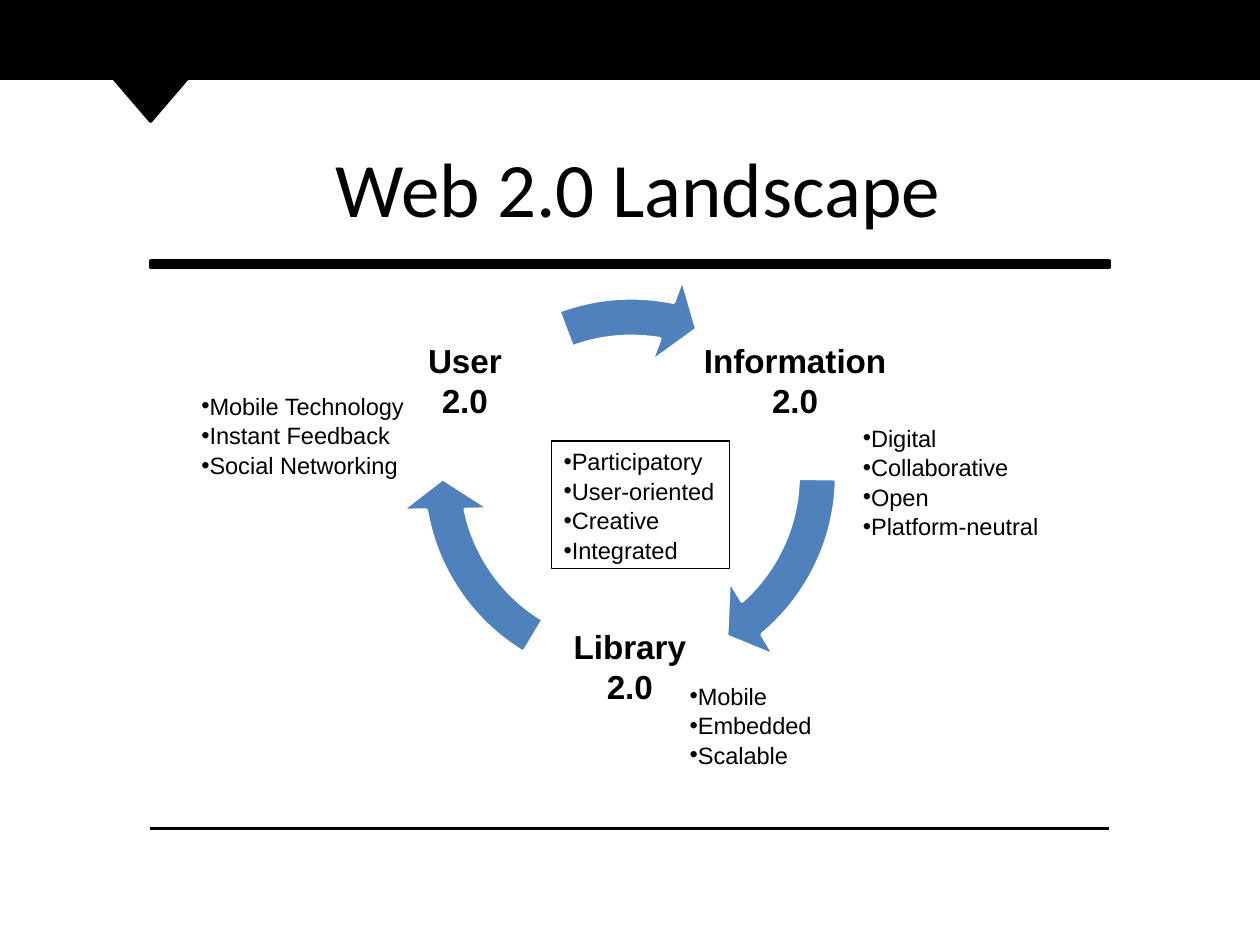
import pptx
import pptx.util
import pptx.dml.color
import pptx.enum.shapes
import pptx.enum.text
import pptx.oxml
import pptx.oxml.ns
from dataclasses import dataclass

Pt = pptx.util.Pt
Shape = pptx.enum.shapes.MSO_SHAPE
Align = pptx.enum.text.PP_ALIGN
Anchor = pptx.enum.text.MSO_ANCHOR


@dataclass(frozen=True)
class Theme:
    ink: str = "000000"
    paper: str = "FFFFFF"
    arrow: str = "4F81BD"
    title_font: str = "Calibri"
    body_font: str = "Arial"
    title_size: float = 44
    label_size: float = 19
    list_size: float = 13.5
    list_gap: float = 0.7
    line_width: float = 2
    frame_width: float = 0.75


THEME = Theme()
CYCLE_BOX = (209.5, 139.3, 301, 305)
LABEL_SIDE = 112.3
ARROW_SIDE = 265


def rgb(value):
    return pptx.dml.color.RGBColor.from_string(value)


def points(box):
    return [Pt(length) for length in box]


def drawing(markup):
    """Parse one drawing element, given without its namespace prefix."""
    return pptx.oxml.parse_xml(f"<a:{markup[0]} {pptx.oxml.ns.nsdecls('a')} {markup[1]}/>")


def add_filled(page, kind, box, fill, line):
    shape = page.shapes.add_shape(kind, *points(box))
    shape.shadow.inherit = False
    shape.fill.solid()
    shape.fill.fore_color.rgb = rgb(fill)
    shape.line.color.rgb = rgb(line)
    shape.line.width = Pt(THEME.line_width)
    return shape


def add_text(para, text, font, size, bold=False):
    span = para.add_run()
    span.text = text
    span.font.name = font
    span.font.size = Pt(size)
    span.font.bold = bold
    span.font.color.rgb = rgb(THEME.ink)


def paragraphs(frame, lines):
    """Yield each line with a paragraph of its own."""
    for index, line in enumerate(lines):
        yield (frame.add_paragraph() if index else frame.paragraphs[0]), line


def add_banner(page, box):
    """Black band with a pointer hanging below it."""
    left, top, width, height = box
    add_filled(page, Shape.RECTANGLE, box, THEME.ink, THEME.ink)
    pointer = add_filled(page, Shape.ISOSCELES_TRIANGLE,
                         (left + 53.3, top + 30.3, 65.5, 38.2), THEME.ink, THEME.ink)
    pointer.rotation = 180


def add_rules(page, box):
    """Thick bar along the top of the box, thin line along its bottom."""
    left, top, width, height = box
    add_filled(page, Shape.RECTANGLE, (left, top, width, 3.6), THEME.ink, THEME.ink)
    rule = page.shapes.add_connector(
        pptx.enum.shapes.MSO_CONNECTOR.STRAIGHT,
        *points((left, top + height, left + width, top + height)))
    rule.line.color.rgb = rgb(THEME.ink)
    rule.line.width = Pt(THEME.line_width)
    rule._element.spPr.append(drawing(("effectLst", "")))


def fill_title(page, box, text):
    title = page.shapes.title
    title.left, title.top, title.width, title.height = points(box)
    frame = title.text_frame
    frame.margin_left = Pt(115.5)
    frame.vertical_anchor = Anchor.MIDDLE
    para = frame.paragraphs[0]
    para.alignment = Align.LEFT
    add_text(para, text, THEME.title_font, THEME.title_size)


def add_label(page, box, lines):
    frame = page.shapes.add_textbox(*points(box)).text_frame
    frame.word_wrap = True
    frame.vertical_anchor = Anchor.MIDDLE
    frame.margin_left = frame.margin_right = Pt(2)
    frame.margin_top = frame.margin_bottom = Pt(2)
    for para, line in paragraphs(frame, lines):
        para.alignment = Align.CENTER
        add_text(para, line, THEME.body_font, THEME.label_size, bold=True)


def add_cycle(page, box):
    """Three labels joined in a ring by three circular arrows."""
    left, top, width, height = box
    stages = [
        ("Information", (188.7, 22), (18, 0), (29.619, 0.531)),
        ("Library", (94.3, 185.4), (18, 0), (101.704, 72.616)),
        ("User", (0, 22), (18.7, 16.5), (168.549, 149.686)),
    ]
    for name, label_at, arrow_at, (head_angle, tail_angle) in stages:
        add_label(page, (left + label_at[0], top + label_at[1], LABEL_SIDE, LABEL_SIDE),
                  [name, "2.0"])
        arrow = add_filled(page, Shape.CIRCULAR_ARROW,
                           (left + arrow_at[0], top + arrow_at[1], ARROW_SIDE, ARROW_SIDE),
                           THEME.arrow, THEME.paper)
        for index, value in enumerate((0.083, 5.766, head_angle, tail_angle, 0.096)):
            arrow.adjustments[index] = value


def add_list(page, box, items, framed=False):
    if framed:
        shape = page.shapes.add_shape(Shape.RECTANGLE, *points(box))
        shape.shadow.inherit = False
        shape.fill.background()
        shape.line.color.rgb = rgb(THEME.ink)
        shape.line.width = Pt(THEME.frame_width)
    else:
        shape = page.shapes.add_textbox(*points(box))
    frame = shape.text_frame
    frame.word_wrap = not framed
    frame.vertical_anchor = Anchor.TOP
    for para, item in paragraphs(frame, items):
        para.alignment = Align.LEFT
        if item != items[0]:
            para.space_before = Pt(THEME.list_gap)
        properties = para._p.get_or_add_pPr()
        properties.append(drawing(("buFont", f'typeface="{THEME.body_font}"')))
        properties.append(drawing(("buChar", 'char="•"')))
        add_text(para, item, THEME.body_font, THEME.list_size)


def main():
    deck = pptx.Presentation()
    deck.slide_width, deck.slide_height = Pt(720), Pt(540)
    page = deck.slides.add_slide(deck.slide_layouts.get_by_name("Title Only"))

    add_banner(page, (0, 0.7, 720, 44))
    add_rules(page, (86, 149, 548, 324.5))
    fill_title(page, (76.3, 69.1, 568, 75), "Web 2.0 Landscape")
    add_cycle(page, CYCLE_BOX)
    add_list(page, (315, 252, 102, 73),
             ["Participatory", "User-oriented", "Creative", "Integrated"], framed=True)
    add_list(page, (486, 238.5, 118, 73),
             ["Digital", "Collaborative", "Open", "Platform-neutral"])
    add_list(page, (108, 220.3, 138, 89),
             ["Mobile Technology", "Instant Feedback", "Social Networking"])
    add_list(page, (387, 386, 152.6, 89), ["Mobile", "Embedded", "Scalable"])

    deck.save("out.pptx")


if __name__ == "__main__":
    main()
